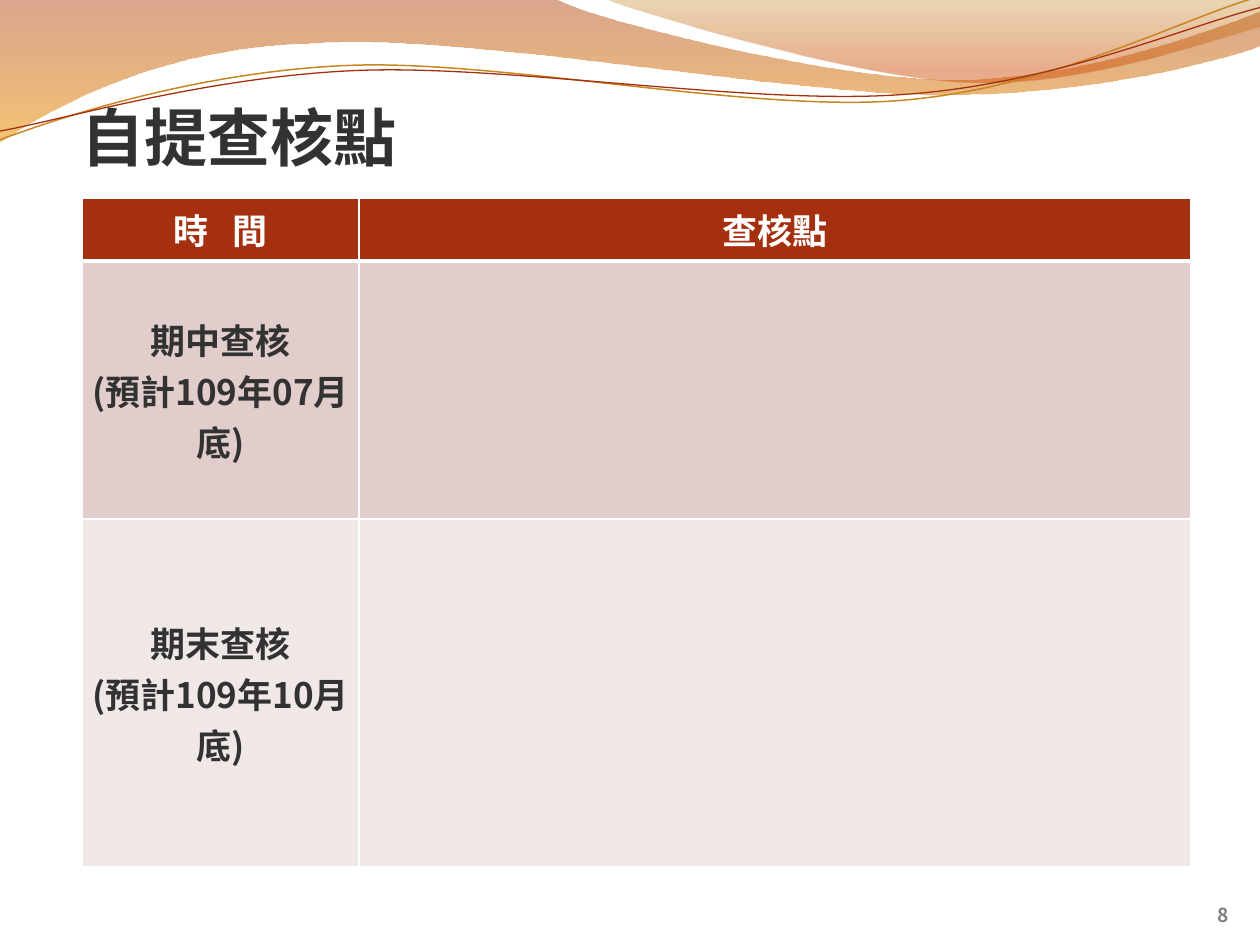
from dataclasses import dataclass
from lxml import etree
from pptx import Presentation
from pptx import util as u
from pptx.dml.color import RGBColor
from pptx.enum import text as tx
from pptx.oxml.ns import qn


@dataclass(frozen=True)
class Theme:
    font: str = "Noto Sans CJK SC"
    ink: str = "323232"
    white: str = "FFFFFF"
    gray: str = "808080"
    red: str = "A5300F"
    gold: str = "C78621"
    bands: tuple = ("E1CDCC", "F0E8E7")
    head: int = 36
    body: int = 20
    note: int = 11


T = Theme()

# Wave outlines in inches: a pair is a line's end, six numbers are a curve
BROAD = [(0, 0), (4.4, -0.01),
         (4.75, 0.17, 6.63, 0.63, 7.58, 0.63), (8.53, 0.63, 9.58, 0.26, 10, 0.09),
         (10.01, 0.36),
         (9.83, 0.44, 8.69, 0.76, 7.46, 0.75), (6.22, 0.75, 3.81, 0.28, 2.57, 0.34),
         (1.29, 0.36, 0.46, 0.83, -0.01, 1.13)]
CORNER = [(4.79, -0.01),
          (5.09, 0.11, 6.82, 0.62, 7.68, 0.65), (8.55, 0.69, 9.61, 0.32, 10, 0.21),
          (10, 0)]
UPPER = [(0, 1.11),
         (0.48, 0.93, 1.57, 0.57, 2.76, 0.52), (3.95, 0.47, 5.92, 0.89, 7.12, 0.8),
         (8.33, 0.71, 9.38, 0.15, 9.97, -0.02)]
LOWER = [(0, 1.04),
         (0.47, 0.96, 1.63, 0.61, 2.83, 0.56), (4.02, 0.51, 5.97, 0.84, 7.17, 0.75),
         (8.36, 0.67, 9.41, 0.21, 10, 0.06)]


def apply(obj, fmt):
    for name, val in fmt.items():
        setattr(obj, name, val)


def write(par, words, size, color, align):
    """Put one styled run in a paragraph."""
    par.alignment = align
    run = par.add_run()
    run.text = words
    apply(run.font, {"name": T.font, "size": u.Pt(size), "bold": True})
    run.font.color.rgb = RGBColor.from_string(color)
    props = run._r.get_or_add_rPr()
    props.set("lang", "zh-TW")
    latin = props.find(qn("a:latin"))
    east = etree.Element(qn("a:ea"), typeface=T.font)
    latin.addnext(east)


def curve(slide, box, steps, close):
    """Build a freeform, then join each three points of a curve."""
    left, top = box[:2]
    pts = [(u.Inches(left + s[i]), u.Inches(top + s[i + 1]))
           for s in steps for i in range(0, len(s), 2)]
    pen = slide.shapes.build_freeform(*pts[0], scale=1.0)
    pen.add_line_segments(pts[1:], close=close)
    shape = pen.convert_to_shape()
    shape.shadow.inherit = False
    ends = iter(shape._element.xpath(".//a:lnTo"))
    for step in steps[1:]:
        first = next(ends)
        if len(step) == 6:
            bend = etree.Element(qn("a:cubicBezTo"))
            first.addprevious(bend)
            for end in (first, next(ends), next(ends)):
                bend.append(end[0])
                end.getparent().remove(end)
    return shape


def waves(slide, box):
    # Translucent fills: colour, position, opacity in percent
    for steps, stops in (
            (BROAD, (("AC3D02", 0, 45), ("EE9100", 1, 55))),
            (CORNER, (("BB7507", 0, 30), ("CF4800", 0.8, 45)))):
        shape = curve(slide, box, steps, True)
        shape.line.fill.background()
        shape.fill.gradient()
        shape.fill.gradient_angle = 270
        for stop, (color, pos, _) in zip(shape.fill.gradient_stops, stops):
            stop.color.rgb = RGBColor.from_string(color)
            stop.position = pos
        for node, (_, _, alpha) in zip(
                shape._element.xpath(".//a:gs/a:srgbClr"), stops):
            etree.SubElement(node, qn("a:alpha"), val=str(alpha * 1000))
    # Thin lines
    for steps, color, width in ((UPPER, T.gold, 0.85), (LOWER, T.red, 0.75)):
        shape = curve(slide, box, steps, False)
        shape.fill.background()
        shape.line.color.rgb = RGBColor.from_string(color)
        shape.line.width = u.Pt(width)


def label(shape, box, words, size, color, align, pad):
    """Place bottom-anchored text in a box."""
    apply(shape, dict(zip(("left", "top", "width", "height"),
                          map(u.Inches, box))))
    frame = shape.text_frame
    apply(frame, {"word_wrap": True, "auto_size": tx.MSO_AUTO_SIZE.NONE,
                  "vertical_anchor": tx.MSO_ANCHOR.BOTTOM,
                  "margin_left": 0, "margin_right": 0,
                  "margin_top": u.Inches(pad), "margin_bottom": 0})
    write(frame.paragraphs[0], words, size, color, align)


def edges(cell, base):
    """Draw white borders, with the given bottom width."""
    props = cell._tc.get_or_add_tcPr()
    for i, (side, width) in enumerate(zip("LRTB", (1, 1, 1, base))):
        line = etree.Element(qn(f"a:ln{side}"), w=str(u.Pt(width)))
        fill = etree.SubElement(line, qn("a:solidFill"))
        etree.SubElement(fill, qn("a:srgbClr"), val=T.white)
        props.insert(i, line)


def checks(slide, box):
    rows = [(["時   間"], ["查核點"]),
            (["期中查核", "(預計109年07月底)"], []),
            (["期末查核", "(預計109年10月底)"], [])]
    left, top, width, height = map(u.Inches, box)
    grid = slide.shapes.add_table(len(rows), 2, left, top, width, height).table
    for col, part in zip(grid.columns, (0.25, 0.75)):
        col.width = int(width * part)
    for row, tall in zip(grid.rows, (0.5, 2.05, 2.76)):
        row.height = u.Inches(tall)
    for r, row in enumerate(rows):
        back = (T.red, *T.bands)[r]
        ink = T.ink if r else T.white
        for c, lines in enumerate(row):
            cell = grid.cell(r, c)
            apply(cell, {"vertical_anchor": tx.MSO_ANCHOR.MIDDLE,
                         "margin_left": u.Inches(0.07),
                         "margin_right": u.Inches(0.07),
                         "margin_top": 0, "margin_bottom": 0})
            cell.fill.solid()
            cell.fill.fore_color.rgb = RGBColor.from_string(back)
            edges(cell, 1 if r else 3)
            frame = cell.text_frame
            for i, words in enumerate(lines):
                par = frame.add_paragraph() if i else frame.paragraphs[0]
                write(par, words, T.body, ink, tx.PP_ALIGN.CENTER)


def main():
    deck = Presentation()
    apply(deck, {"slide_width": u.Inches(10), "slide_height": u.Inches(7.5)})
    slide = deck.slides.add_slide(deck.slide_layouts[5])
    waves(slide, (0, 0, 10, 1.14))
    # Title goes in front of the waves
    title = slide.shapes.title
    slide.shapes._spTree.append(title._element)
    label(title, (0.65, 0.13, 7.22, 1.25), "自提查核點",
          T.head, T.ink, tx.PP_ALIGN.LEFT, 0.05)
    checks(slide, (0.65, 1.57, 8.8, 5.31))
    # Page number
    page = slide.shapes.add_textbox(0, 0, 0, 0)
    label(page, (8.92, 6.95, 0.83, 0.4), "8",
          T.note, T.gray, tx.PP_ALIGN.RIGHT, 0)
    deck.save("out.pptx")


if __name__ == "__main__":
    main()
